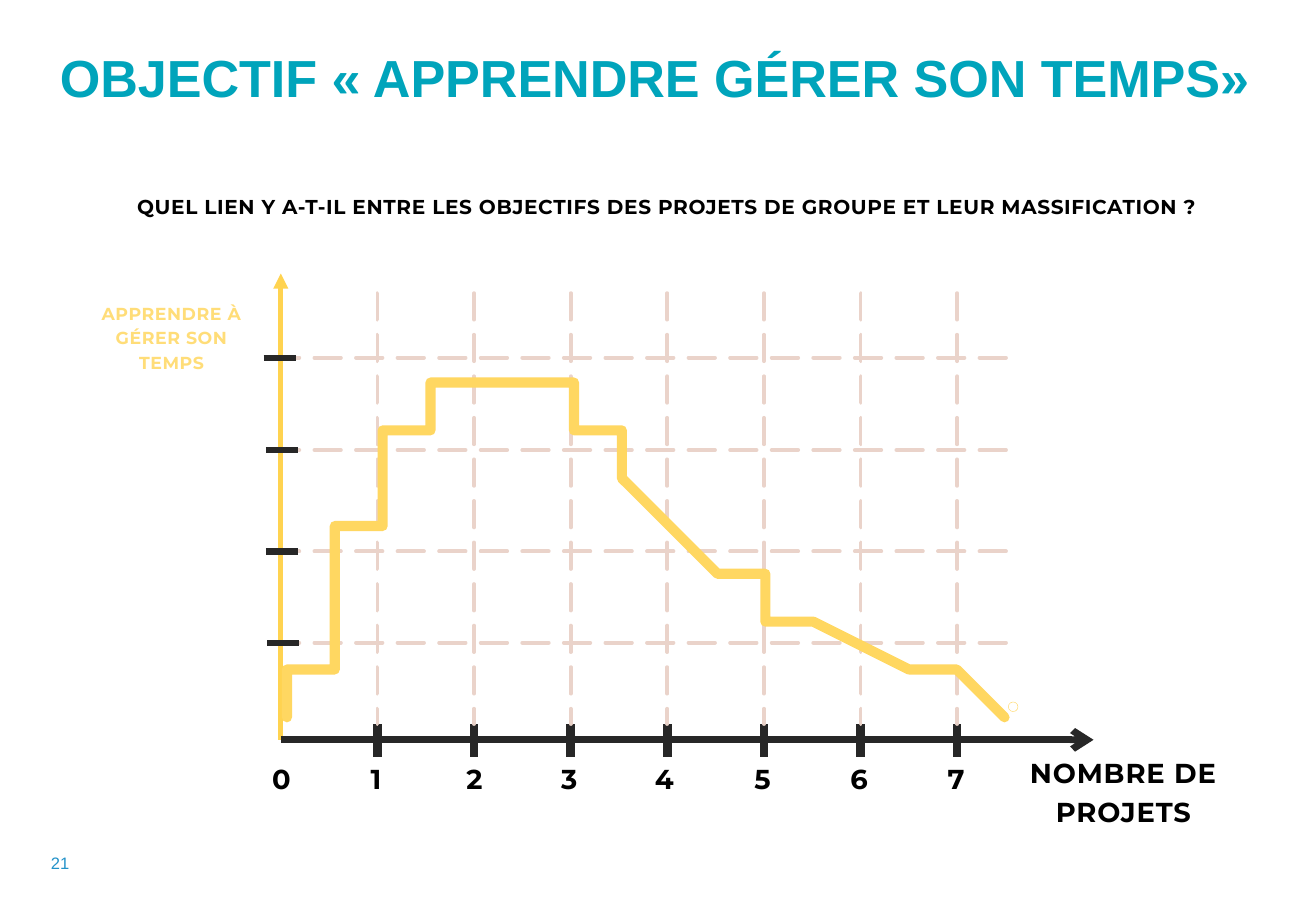
from lxml import etree
from pptx import Presentation
from pptx.dml.color import RGBColor
from pptx.enum.dml import MSO_LINE
from pptx.enum.shapes import MSO_CONNECTOR, MSO_SHAPE
from pptx.enum.text import MSO_ANCHOR, PP_ALIGN
from pptx.oxml.ns import qn
from pptx.util import Cm, Pt

LEFT, CENTER, RIGHT = PP_ALIGN.LEFT, PP_ALIGN.CENTER, PP_ALIGN.RIGHT
TOP, MIDDLE = MSO_ANCHOR.TOP, MSO_ANCHOR.MIDDLE
STRAIGHT, OVAL = MSO_CONNECTOR.STRAIGHT, MSO_SHAPE.OVAL
LONG_DASH = MSO_LINE.LONG_DASH

TEAL = RGBColor(0x00, 0xA4, 0xBB)
BLUE = RGBColor(0x23, 0x92, 0xC9)
BLACK = RGBColor(0x00, 0x00, 0x00)
WHITE = RGBColor(0xFF, 0xFF, 0xFF)
CHARCOAL = RGBColor(0x27, 0x27, 0x27)
BEIGE = RGBColor(0xEA, 0xD3, 0xCA)
AXIS_YELLOW = RGBColor(0xFF, 0xD3, 0x50)
CURVE_YELLOW = RGBColor(0xFF, 0xD7, 0x61)
LABEL_YELLOW = RGBColor(0xFF, 0xDD, 0x78)

prs = Presentation()
prs.slide_width, prs.slide_height = Cm(27.51), Cm(19.05)
slide = prs.slides.add_slide(prs.slide_layouts[6])


def add_text(text, left, top, width, height, size, color, font="Montserrat", bold=True,
             align=CENTER, anchor=TOP, spacing=None, tracking=0):
    frame = slide.shapes.add_textbox(Cm(left), Cm(top), Cm(width), Cm(height)).text_frame
    frame.word_wrap = True
    frame.vertical_anchor = anchor
    frame.margin_left = frame.margin_right = frame.margin_top = frame.margin_bottom = 0
    paragraph = frame.paragraphs[0]
    paragraph.alignment = align
    if spacing:
        paragraph.line_spacing = Pt(spacing)
    run = paragraph.add_run()
    run.text = text
    run.font.name, run.font.size, run.font.bold = font, Pt(size), bold
    run.font.color.rgb = color
    if tracking:
        run.font._element.set("spc", str(tracking))


def add_line(x1, y1, x2, y2, color, weight, dashed=False, arrow=None):
    connector = slide.shapes.add_connector(STRAIGHT, Cm(x1), Cm(y1), Cm(x2), Cm(y2))
    line = connector.line
    line.color.rgb, line.width = color, Pt(weight)
    outline = line._get_or_add_ln()
    if dashed:
        line.dash_style = LONG_DASH
        outline.set("cap", "rnd")
    if arrow:
        etree.SubElement(outline, qn("a:tailEnd"), type=arrow)
    etree.SubElement(connector._element.spPr, qn("a:effectLst"))


add_text("QUEL LIEN Y A-T-IL ENTRE LES OBJECTIFS DES PROJETS DE GROUPE ET LEUR MASSIFICATION ?",
         2.79, 3.99, 22.3, 0.56, 11.9, BLACK, spacing=16.7, tracking=40)
add_text("OBJECTIF «\u00a0APPRENDRE GÉRER SON TEMPS»".replace("\u00a0", " "),
         0.97, 0.86, 25.43, 1.75, 30.9, TEAL, font="Arial", spacing=39.6)

origin_x, origin_y, project_step = 5.87, 15.47, 2.02
add_line(origin_x, origin_y, origin_x, 5.72, AXIS_YELLOW, 3, arrow="triangle")
add_line(origin_x, origin_y, 22.86, origin_y, CHARCOAL, 4, arrow="arrow")

number_lefts = [5.69, 7.75, 9.75, 11.73, 13.69, 15.77, 17.78, 19.81]
for projects, number_left in enumerate(number_lefts):
    add_text(str(projects), number_left, 16.03, 0.53, 0.61, 16.2, BLACK, align=LEFT, spacing=16.7)
    if projects:
        x = origin_x + projects * project_step
        add_line(x, 15.82, x, 15.14, CHARCOAL, 5)
        add_line(x, 6.13, x, 15.14, BEIGE, 2.25, dashed=True)

add_text("NOMBRE DE PROJETS", 21.11, 15.7, 4.75, 1.57, 16.2, BLACK, spacing=22.8, tracking=50)
add_text("APPRENDRE À GÉRER SON TEMPS", 1.8, 6.27, 3.58, 0.97, 10.3, LABEL_YELLOW,
         spacing=14.4, tracking=30)

for tick_left, y in [(5.51, 7.48), (5.56, 9.41), (5.56, 11.53), (5.59, 13.44)]:
    add_line(21.03, y, 5.92, y, BEIGE, 2.25, dashed=True)
    add_line(tick_left, y, tick_left + 0.67, y, CHARCOAL, 3.75)

curve_points = [
    (5.97, 15.34), (6.17, 14.91), (6.5, 14.27), (6.73, 13.79), (6.83, 13.41), (6.99, 13.03),
    (7.16, 12.37), (7.26, 11.89), (7.34, 11.63), (7.47, 11.13), (7.65, 10.54), (7.7, 10.31),
    (7.87, 9.86), (8.03, 9.5), (8.18, 9.17), (8.64, 8.56), (8.84, 8.33), (9.07, 8.15),
    (9.3, 8.03), (9.58, 7.9), (9.83, 7.82), (10.06, 7.8), (10.87, 7.8), (11.23, 7.87),
    (11.73, 8.08), (12.01, 8.26), (12.24, 8.48), (12.42, 8.69), (12.62, 9.02), (12.83, 9.42),
    (12.98, 9.63), (13.69, 10.52), (14.17, 11.07), (14.55, 11.51), (14.94, 11.84),
    (15.62, 12.34), (16.26, 12.72), (16.74, 12.98), (17.12, 13.18), (17.48, 13.36),
    (19, 13.89), (19.63, 14.17), (20.52, 14.61), (20.78, 14.71), (21.08, 14.78),
]
builder = slide.shapes.build_freeform(*curve_points[0], scale=Cm(1))
builder.add_line_segments(curve_points[1:], close=False)
curve = builder.convert_to_shape()
curve.shadow.inherit = False
curve.fill.background()
curve.line.color.rgb, curve.line.width = CURVE_YELLOW, Pt(6)
curve_outline = curve.line._get_or_add_ln()
curve_outline.set("cap", "rnd")
etree.SubElement(curve_outline, qn("a:round"))

curve_end = slide.shapes.add_shape(OVAL, Cm(21.08), Cm(14.68), Cm(0.2), Cm(0.2))
curve_end.shadow.inherit = False
curve_end.fill.solid()
curve_end.fill.fore_color.rgb = WHITE
curve_end.line.color.rgb, curve_end.line.width = CURVE_YELLOW, Pt(0.25)

add_text("21", 0.36, 17.7, 1.09, 0.69, 9.8, BLUE, font="Arial", bold=False,
         align=RIGHT, anchor=MIDDLE)

prs.save("out.pptx")
